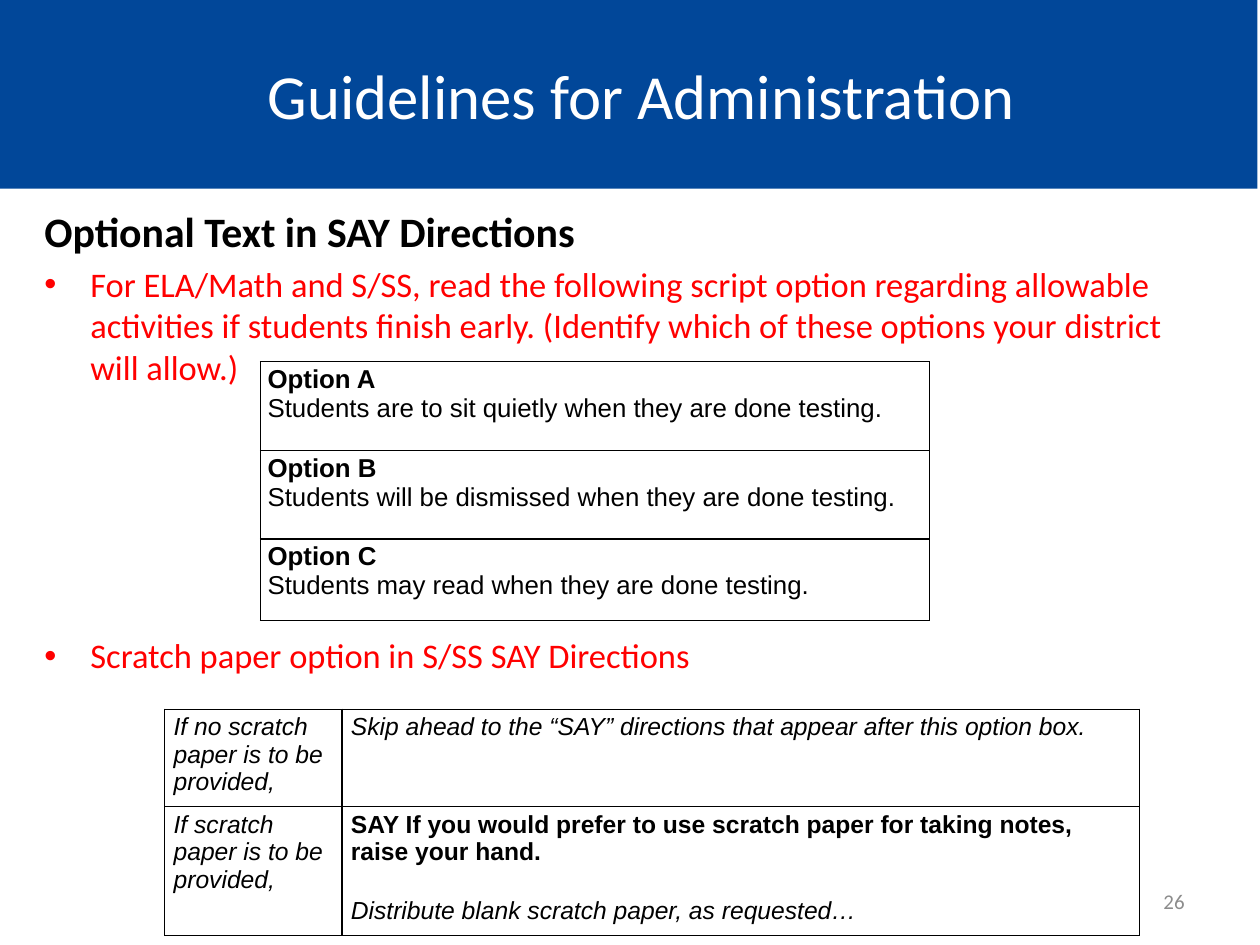
from pptx import Presentation
from pptx.dml.color import RGBColor as Rgb
from pptx.enum.shapes import MSO_SHAPE as Shape
from pptx.enum.text import MSO_ANCHOR as Anchor, PP_ALIGN as Align
from pptx.oxml.ns import qn
from pptx.util import Pt
from lxml.etree import SubElement as Sub

PX = 9144
SIZE = (1422, 1066)
BLUE, WHITE, BLACK, RED, GRAY = "014799", "FFFFFF", "000000", "FF0000", "8C8C8C"

BAND = (0, 0, 1419, 213)
TITLE = ((0, 12, 1422, 190), "Guidelines for Administration")
PAGE = ((1019, 988, 332, 57), "26")
BODY = (36, 225, 1351, 737)
HEAD = "Optional Text in SAY Directions"
POINTS = [
    ("For ELA/Math and S/SS, read the following script option regarding allowable "
     "activities if students finish early. (Identify which of these options your "
     "district will allow.)", 5.6),
    ("Scratch paper option in S/SS SAY Directions", 201),
]
INDENT = 52

# style letters: b bold, i italic, n normal
CHOICES = [
    [[("Option A", "b", 0), ("Students are to sit quietly when they are done testing.", "n", 0)]],
    [[("Option B", "b", 0), ("Students will be dismissed when they are done testing.", "n", 0)]],
    [[("Option C", "b", 0), ("Students may read when they are done testing.", "n", 0)]],
]
SCRATCH = [
    [[("If no scratch paper is to be provided,", "i", 0)],
     [("Skip ahead to the “SAY” directions that appear after this option box.", "i", 0)]],
    [[("If scratch paper is to be provided,", "i", 0)],
     [("SAY If you would prefer to use scratch paper for taking notes, raise your hand.", "b", 0),
      ("Distribute blank scratch paper, as requested…", "i", 25)]],
]
GRIDS = [
    (CHOICES, (294, 408), [755], [100, 100, 92], (8, 4), 21),
    (SCRATCH, (186, 800), [200, 900], [110, 143], (10, 5), 20),
]


def px(*nums):
    return [n * PX for n in nums]


def tint(code):
    return Rgb.from_string(code)


def pad(item, x, y):
    item.margin_left = item.margin_right = x * PX
    item.margin_top = item.margin_bottom = y * PX


def style(para, text, size, color, font="Calibri", mode="n", gap=0):
    para.text = text
    para.space_before = Pt(gap)
    for run in para.runs:
        run.font.name = font
        run.font.size = Pt(size)
        run.font.color.rgb = tint(color)
        run.font.bold = mode == "b"
        run.font.italic = mode == "i"


def box(slide, area, anchor):
    frame = slide.shapes.add_textbox(*px(*area)).text_frame
    frame.word_wrap = True
    frame.vertical_anchor = anchor
    pad(frame, 14, 7)
    return frame


def label(slide, area, text, size, color, align):
    frame = box(slide, area, Anchor.MIDDLE)
    para = frame.paragraphs[0]
    style(para, text, size, color)
    para.alignment = align
    return frame


def bullet(para):
    props = para._p.get_or_add_pPr()
    props.set("marL", str(INDENT * PX))
    props.set("indent", str(-INDENT * PX))
    Sub(props, qn("a:buFont"), typeface="Arial")
    Sub(props, qn("a:buChar"), char="•")


def border(cell):
    props = cell._tc.get_or_add_tcPr()
    for side in ("lnL", "lnR", "lnT", "lnB"):
        line = Sub(props, qn("a:" + side), w=str(Pt(1)))
        fill = Sub(line, qn("a:solidFill"))
        Sub(fill, qn("a:srgbClr"), val=BLACK)


def grid(slide, data, spot, cols, rows, inset, size):
    area = px(*spot, sum(cols), sum(rows))
    table = slide.shapes.add_table(len(rows), len(cols), *area).table
    table.first_row = table.horz_banding = False
    for col, wide in zip(table.columns, cols):
        col.width = wide * PX
    for row, high, texts in zip(table.rows, rows, data):
        row.height = high * PX
        for cell, lines in zip(row.cells, texts):
            pad(cell, *inset)
            border(cell)
            cell.fill.background()
            frame = cell.text_frame
            frame.text = "\n".join(text for text, mode, gap in lines)
            for para, (text, mode, gap) in zip(frame.paragraphs, lines):
                style(para, text, size, BLACK, "Arial", mode, gap)


def main():
    deck = Presentation()
    deck.slide_width, deck.slide_height = px(*SIZE)
    slide = deck.slides.add_slide(deck.slide_layouts[6])

    label(slide, *PAGE, 17, GRAY, Align.RIGHT)
    band = slide.shapes.add_shape(Shape.RECTANGLE, *px(*BAND))
    band.shadow.inherit = False
    band.fill.solid()
    band.fill.fore_color.rgb = tint(BLUE)
    band.line.fill.background()
    title = label(slide, *TITLE, 51, WHITE, Align.CENTER)
    title.margin_left = 40 * PX

    body = box(slide, BODY, Anchor.TOP)
    style(body.paragraphs[0], HEAD, 34, BLACK, mode="b")
    for text, gap in POINTS:
        para = body.add_paragraph()
        style(para, text, 28, RED, gap=gap)
        bullet(para)

    for item in GRIDS:
        grid(slide, *item)
    deck.save("out.pptx")


if __name__ == "__main__":
    main()
